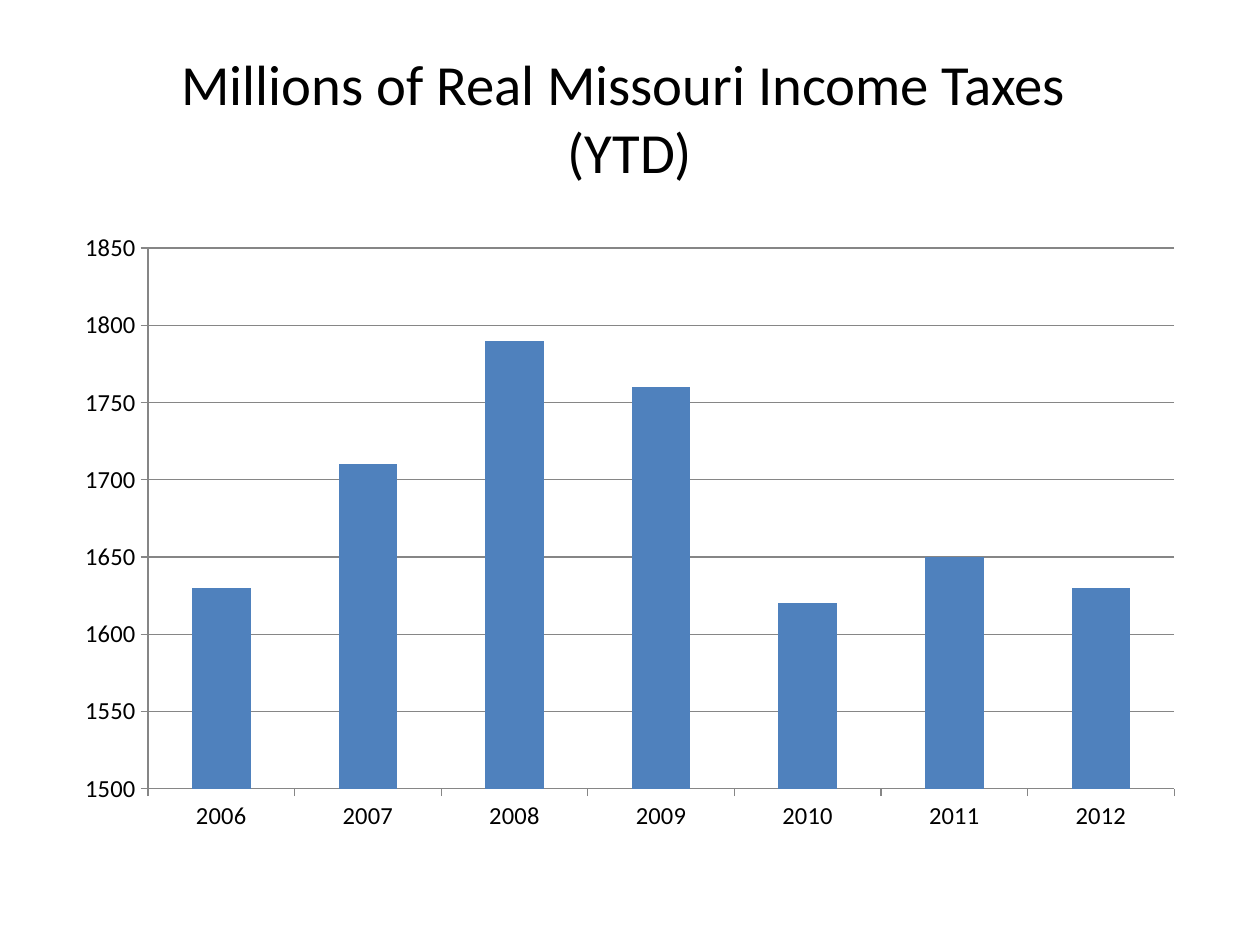
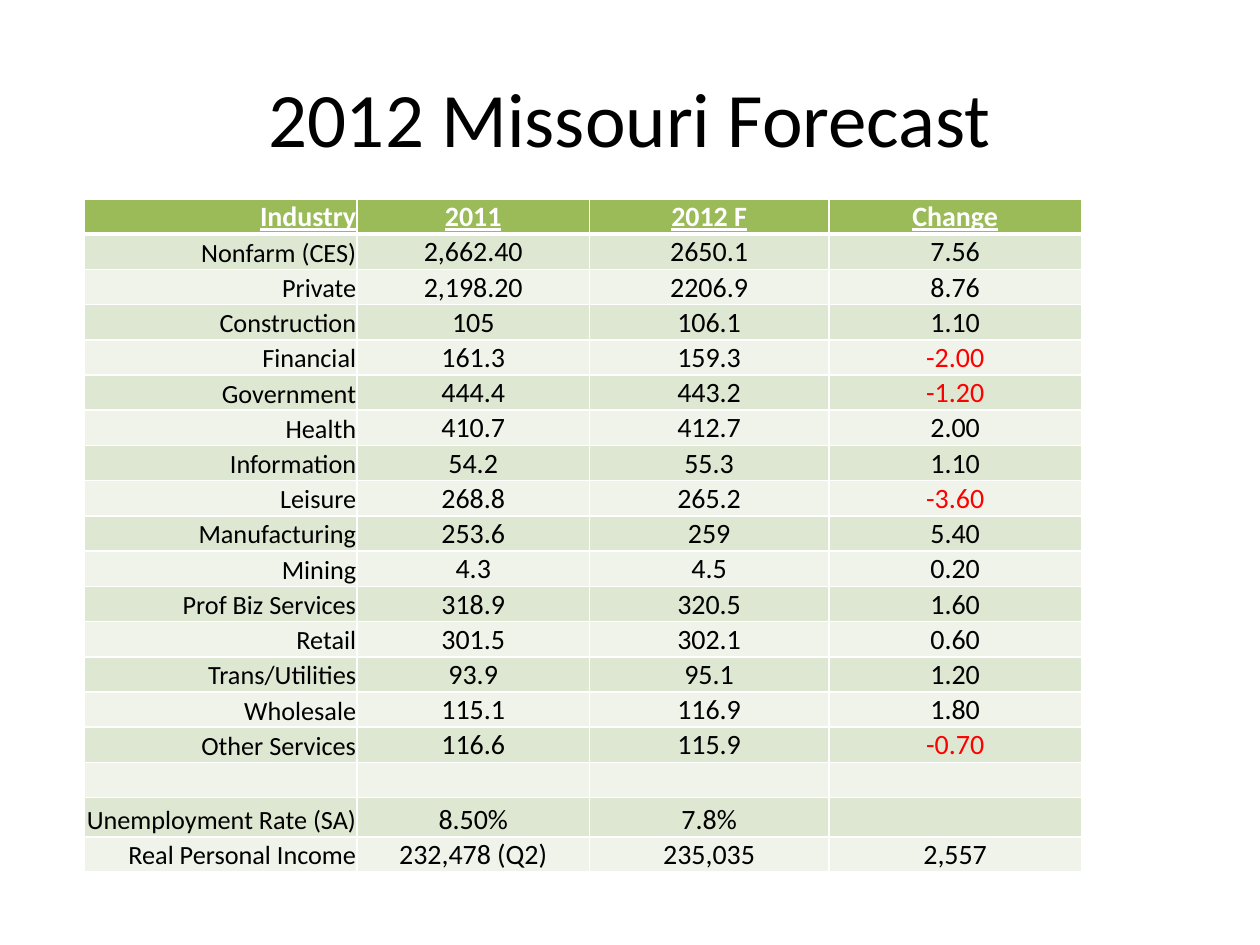
from dataclasses import dataclass

from lxml import etree
from pptx import Presentation
from pptx.chart.data import CategoryChartData
from pptx.dml.color import RGBColor
from pptx.enum.chart import XL_CHART_TYPE, XL_TICK_MARK
from pptx.enum.text import MSO_ANCHOR, PP_ALIGN
from pptx.oxml import parse_xml
from pptx.oxml.ns import nsdecls, qn
from pptx.util import Cm, Pt

COLUMNS = XL_CHART_TYPE.COLUMN_CLUSTERED
TICK_OUT, TICK_NONE = XL_TICK_MARK.OUTSIDE, XL_TICK_MARK.NONE
MIDDLE, BOTTOM = MSO_ANCHOR.MIDDLE, MSO_ANCHOR.BOTTOM
CENTER, RIGHT = PP_ALIGN.CENTER, PP_ALIGN.RIGHT


@dataclass(frozen=True)
class Theme:
    """Colours, font and type sizes of the deck."""
    font: str = "Calibri"
    ink: str = "000000"
    paper: str = "FFFFFF"
    negative: str = "FF0000"
    bar: str = "4F81BD"
    axis: str = "868686"
    header: str = "9BBB59"
    bands: tuple = ("DEE7D1", "EFF3EA")
    title_size: float = 44
    long_title_size: float = 32.4
    axis_size: float = 14
    label_size: float = 15
    value_size: float = 16
    border: float = 1
    header_border: float = 3


def assign(target, values):
    """Set every named attribute of the target."""
    for name, value in values.items():
        setattr(target, name, value)


class SlideBuilder:
    """Draws titles, charts and tables on the current slide."""

    def __init__(self, deck, theme):
        """Keep the deck and its style."""
        self.deck = deck
        self.theme = theme
        self.slide = None

    def new_slide(self):
        """Start a blank slide."""
        self.slide = self.deck.slides.add_slide(self.deck.slide_layouts[6])

    def style_font(self, font, size, color, **extra):
        """Apply the deck font with a size, a colour and extra settings."""
        assign(font, {"name": self.theme.font, "size": Pt(size), **extra})
        font.color.rgb = RGBColor.from_string(color)

    def title(self, text, size):
        """Write the centred slide title."""
        box = self.slide.shapes.add_textbox(Cm(1.27), Cm(0.76), Cm(22.86), Cm(3.18))
        assign(box.text_frame, {"word_wrap": True, "vertical_anchor": MIDDLE})
        para = box.text_frame.paragraphs[0]
        para.text = text
        para.alignment = CENTER
        for span in para.runs:
            self.style_font(span.font, size, self.theme.ink)

    def column_chart(self, categories, values, scale):
        """Draw a single-series column chart."""
        data = CategoryChartData()
        data.categories = categories
        data.add_series("Series 1", values)
        chart = self.slide.shapes.add_chart(
            COLUMNS, Cm(1.27), Cm(4.45), Cm(22.86), Cm(12.57), data).chart
        assign(chart, {"has_legend": False, "has_title": False})
        self.style_font(chart.font, self.theme.axis_size, self.theme.ink)
        plot = chart.plots[0]
        assign(plot, {"gap_width": 150, "vary_by_categories": False})
        fill = plot.series[0].format.fill
        fill.solid()
        fill.fore_color.rgb = RGBColor.from_string(self.theme.bar)
        assign(chart.value_axis, {**scale, "has_major_gridlines": True})
        lines = [chart.value_axis.major_gridlines.format.line]
        for axis in (chart.category_axis, chart.value_axis):
            assign(axis, {"major_tick_mark": TICK_OUT, "minor_tick_mark": TICK_NONE})
            self.style_font(axis.tick_labels.font, self.theme.axis_size, self.theme.ink)
            lines.append(axis.format.line)
        for line in lines:
            line.width = Pt(0.75)
            line.color.rgb = RGBColor.from_string(self.theme.axis)
        self.place_plot(chart, {"x": 0.075, "y": 0.044, "w": 0.905, "h": 0.867})

    def place_plot(self, chart, fractions):
        """Fix the inner plot area as fractions of the chart."""
        area = chart.element.find(".//" + qn("c:plotArea"))
        for layout in area.findall(qn("c:layout")):
            area.remove(layout)
        settings = {"layoutTarget": "inner", "xMode": "edge", "yMode": "edge", **fractions}
        items = "".join(f'<c:{name} val="{value}"/>' for name, value in settings.items())
        area.insert(0, parse_xml(
            f'<c:layout {nsdecls("c")}><c:manualLayout>{items}</c:manualLayout></c:layout>'))

    def table(self, rows, widths, heights):
        """Draw a banded table with a header row and right-aligned labels."""
        table = self.slide.shapes.add_table(
            len(rows), len(widths), Cm(1.7), Cm(4.01),
            Cm(sum(widths)), Cm(sum(heights))).table
        for column, width in zip(table.columns, widths):
            column.width = Cm(width)
        for row, height in zip(table.rows, heights):
            row.height = Cm(height)
        for row_index, texts in enumerate(rows):
            for column_index, text in enumerate(texts):
                self.cell(table.cell(row_index, column_index), text, row_index, column_index)

    def cell(self, cell, text, row_index, column_index):
        """Fill and format one table cell."""
        theme = self.theme
        is_header, is_label = row_index == 0, column_index == 0
        assign(cell, {"margin_left": Cm(0.02), "margin_right": Cm(0.02),
                      "margin_top": Cm(0.02), "margin_bottom": 0,
                      "vertical_anchor": BOTTOM})
        cell.fill.solid()
        cell.fill.fore_color.rgb = RGBColor.from_string(
            theme.header if is_header else theme.bands[(row_index - 1) % 2])
        self.borders(cell, row_index)
        size = theme.label_size if is_label and not is_header else theme.value_size
        color = theme.ink
        if is_header:
            color = theme.paper
        elif text.startswith("-"):
            color = theme.negative
        para = cell.text_frame.paragraphs[0]
        para.alignment = RIGHT if is_label else CENTER
        if text:
            span = para.add_run()
            span.text = text
            self.style_font(span.font, size, color, bold=is_header, underline=is_header)
        else:
            end = etree.SubElement(para._p, qn("a:endParaRPr"))
            end.set("sz", str(int(size * 100)))

    def borders(self, cell, row_index):
        """Draw white cell borders, heavier under the header."""
        thin, thick = self.theme.border, self.theme.header_border
        widths = {"lnL": thin, "lnR": thin,
                  "lnT": thick if row_index == 1 else thin,
                  "lnB": thick if row_index == 0 else thin}
        properties = cell._tc.get_or_add_tcPr()
        for position, (side, width) in enumerate(widths.items()):
            properties.insert(position, parse_xml(
                f'<a:{side} {nsdecls("a")} w="{Pt(width)}"><a:solidFill>'
                f'<a:srgbClr val="{self.theme.paper}"/></a:solidFill></a:{side}>'))


INCOME_TAXES = {"2006": 1630, "2007": 1710, "2008": 1790, "2009": 1760,
                "2010": 1620, "2011": 1650, "2012": 1630}
TAX_SCALE = {"minimum_scale": 1500, "maximum_scale": 1850, "major_unit": 50}

FORECAST = [
    ("Industry", "2011", "2012 F", "Change"),
    ("Nonfarm (CES)", "2,662.40", "2650.1", "7.56"),
    ("Private", "2,198.20", "2206.9", "8.76"),
    ("Construction", "105", "106.1", "1.10"),
    ("Financial", "161.3", "159.3", "-2.00"),
    ("Government", "444.4", "443.2", "-1.20"),
    ("Health", "410.7", "412.7", "2.00"),
    ("Information", "54.2", "55.3", "1.10"),
    ("Leisure", "268.8", "265.2", "-3.60"),
    ("Manufacturing", "253.6", "259", "5.40"),
    ("Mining", "4.3", "4.5", "0.20"),
    ("Prof Biz Services", "318.9", "320.5", "1.60"),
    ("Retail", "301.5", "302.1", "0.60"),
    ("Trans/Utilities", "93.9", "95.1", "1.20"),
    ("Wholesale", "115.1", "116.9", "1.80"),
    ("Other Services", "116.6", "115.9", "-0.70"),
    ("", "", "", ""),
    ("Unemployment Rate (SA)", "8.50%", "7.8%", ""),
    ("Real Personal Income", "232,478 (Q2)", "235,035", "2,557"),
]
FORECAST_WIDTHS = (5.5, 4.68, 4.83, 5.09)
FORECAST_HEIGHTS = [0.79 if row[0].startswith("Unemployment") else 0.71 for row in FORECAST]


def main():
    """Build and save the deck."""
    deck = Presentation()
    assign(deck, {"slide_width": Cm(25.4), "slide_height": Cm(19.05)})
    theme = Theme()
    builder = SlideBuilder(deck, theme)

    builder.new_slide()
    builder.title("Millions of Real Missouri Income Taxes \v(YTD)", theme.long_title_size)
    builder.column_chart(list(INCOME_TAXES), list(INCOME_TAXES.values()), TAX_SCALE)

    builder.new_slide()
    builder.title("2012 Missouri Forecast", theme.title_size)
    builder.table(FORECAST, FORECAST_WIDTHS, FORECAST_HEIGHTS)

    deck.save("out.pptx")


if __name__ == "__main__":
    main()
